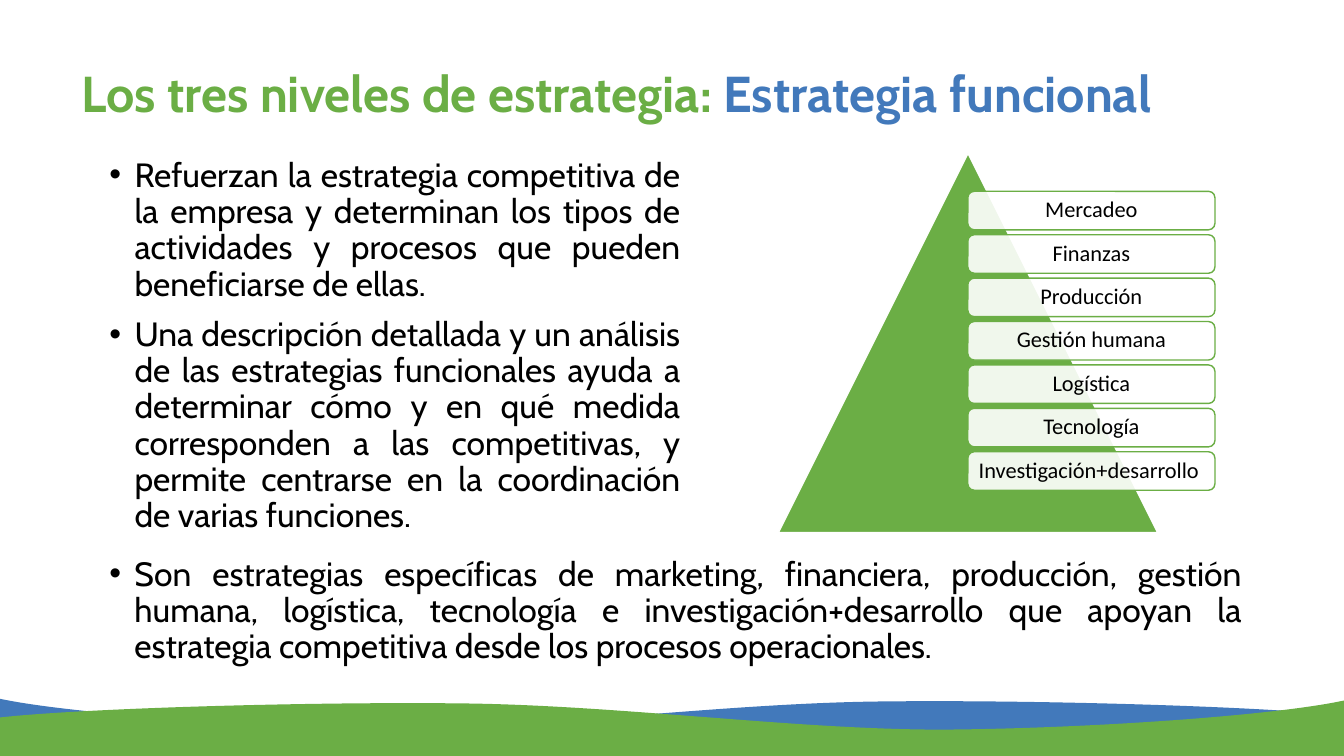
"""Builds the slide on functional strategy with its pyramid of business areas."""
from lxml.etree import SubElement
from pptx import Presentation
from pptx.dml.color import RGBColor
from pptx.enum.shapes import MSO_SHAPE as Preset
from pptx.enum.text import MSO_ANCHOR as Anchor, PP_ALIGN as Align
from pptx.oxml.ns import qn
from pptx.util import Pt

COLORS = {"green": "6BAE45", "blue": "4279BB", "black": "000000", "white": "FFFFFF"}
CREST = [(960, 511.2), (904, 504.7), (739, 499.7), (626.4, 501.1), (515, 502.6),
         (391, 519.8), (286.6, 519.8), (182, 519.1), (49, 509.8), (-0.7, 499)]
BULLETS = [
    ((71, 109.5, 422, 292), [
        "Refuerzan la estrategia competitiva de la empresa y determinan los tipos de "
        "actividades y procesos que pueden beneficiarse de ellas. ",
        "Una descripción detallada y un análisis de las estrategias funcionales ayuda a "
        "determinar cómo y en qué medida corresponden a las competitivas, y permite "
        "centrarse en la coordinación de varias funciones."]),
    ((71, 394.5, 823, 104.5), [
        "Son estrategias específicas de marketing, financiera, producción, gestión humana, "
        "logística, tecnología e investigación+desarrollo que apoyan la estrategia "
        "competitiva desde los procesos operacionales."]),
]
AREAS = ["Mercadeo", "Finanzas", "Producción", "Gestión humana", "Logística",
         "Tecnología", "Investigación+desarrollo "]


def paint(shape, fill, line=None):
    shape.shadow.inherit = False
    shape.fill.solid()
    shape.fill.fore_color.rgb = RGBColor.from_string(COLORS[fill])
    if line:
        shape.line.color.rgb = RGBColor.from_string(COLORS[line])
        shape.line.width = Pt(1)
    else:
        shape.line.fill.background()


def add_text(paragraph, text, font, size, color, bold=False):
    paragraph.line_spacing = 0.9
    run = paragraph.add_run()
    run.text = text
    run.font.name = font
    run.font.size = Pt(size)
    run.font.bold = bold
    run.font.color.rgb = RGBColor.from_string(COLORS[color])


prs = Presentation()
prs.slide_width, prs.slide_height = Pt(960), Pt(540)
shapes = prs.slides.add_slide(prs.slide_layouts[6]).shapes

blue_wave = CREST + [(-0.7, 539.3), (960, 540)]
green_wave = [(959.3 - x, y + 1.4) for x, y in blue_wave]
for color, outline in (("blue", blue_wave), ("green", green_wave)):
    corners = [(Pt(x), Pt(y)) for x, y in outline]
    builder = shapes.build_freeform(*corners[0], scale=1.0)
    builder.add_line_segments(corners[1:], close=True)
    wave = builder.convert_to_shape()
    paint(wave, color)
    segments = list(wave._element.iter(qn("a:lnTo")))
    for start in range(0, len(CREST) - 1, 3):
        curve = SubElement(segments[start].getparent(), qn("a:cubicBezTo"))
        segments[start].addprevious(curve)
        for segment in segments[start:start + 3]:
            curve.append(segment[0])
            segment.getparent().remove(segment)

title = shapes.add_textbox(Pt(51.25), Pt(16.5), Pt(873), Pt(104.5)).text_frame
title.word_wrap = True
title.vertical_anchor = Anchor.MIDDLE
for text, color in (("Los tres niveles de estrategia: ", "green"),
                    ("Estrategia funcional", "blue")):
    add_text(title.paragraphs[0], text, "Cabin", 36, color, bold=True)

for box, statements in BULLETS:
    body = shapes.add_textbox(*map(Pt, box)).text_frame
    body.word_wrap = True
    for index, statement in enumerate(statements):
        paragraph = body.add_paragraph() if index else body.paragraphs[0]
        paragraph.alignment = Align.JUSTIFY
        paragraph.space_before = Pt(10)
        add_text(paragraph, statement, "Cabin", 24, "black")
        properties = paragraph._p.get_or_add_pPr()
        properties.set("marL", str(Pt(18)))
        properties.set("indent", str(Pt(-18)))
        SubElement(properties, qn("a:buFont")).set("typeface", "Arial")
        SubElement(properties, qn("a:buChar")).set("char", "•")

pyramid = shapes.add_shape(Preset.ISOSCELES_TRIANGLE, Pt(556), Pt(109.5), Pt(271), Pt(271))
paint(pyramid, "green", "white")

for row, area in enumerate(AREAS):
    label = shapes.add_shape(
        Preset.ROUNDED_RECTANGLE, Pt(691.3), Pt(136.7 + 31 * row), Pt(176.5), Pt(27.5))
    paint(label, "white", "green")
    fill_color = label.fill._xPr.find(qn("a:solidFill"))[0]
    SubElement(fill_color, qn("a:alpha")).set("val", "90000")
    frame = label.text_frame
    frame.word_wrap = True
    frame.vertical_anchor = Anchor.MIDDLE
    frame.margin_left = frame.margin_right = Pt(5)
    frame.margin_top = frame.margin_bottom = Pt(3)
    frame.paragraphs[0].alignment = Align.CENTER
    add_text(frame.paragraphs[0], area, "Calibri", 16, "black")

prs.save("out.pptx")
